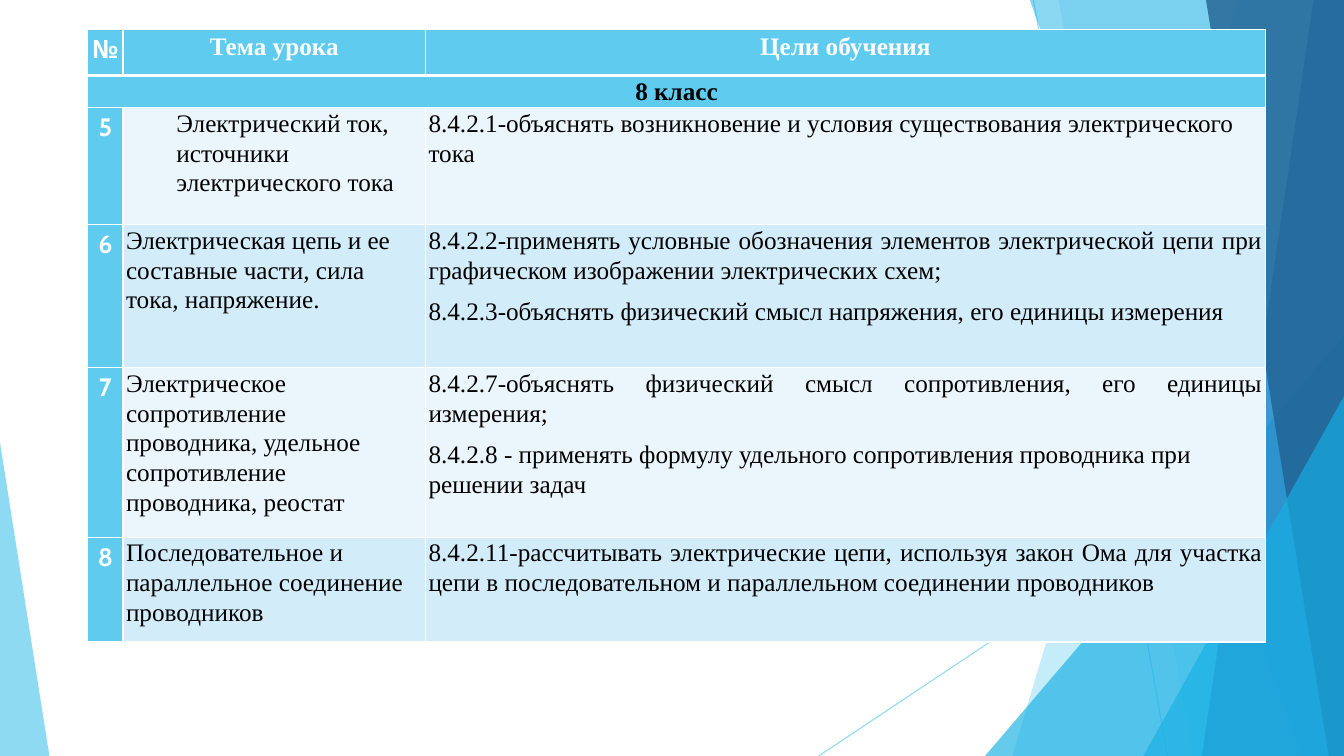
from lxml.etree import SubElement
from pptx import Presentation
from pptx.dml.color import RGBColor
from pptx.enum.shapes import MSO_CONNECTOR, MSO_SHAPE
from pptx.enum.text import PP_ALIGN as Align
from pptx.oxml import parse_xml
from pptx.oxml.ns import nsdecls, qn
from pptx.util import Inches, Pt

WIDTH, HEIGHT = 13.33, 7.5
SKY = RGBColor(0x5F, 0xCB, 0xEF)
AZURE = RGBColor(0x17, 0xB0, 0xE4)
BLUE = RGBColor(0x2E, 0x83, 0xC3)
NAVY = RGBColor(0x22, 0x62, 0x92)
PALE = RGBColor(0xEA, 0xF6, 0xFC)
LIGHT = RGBColor(0xD2, 0xEC, 0xF9)
WHITE = RGBColor(0xFF, 0xFF, 0xFF)
BLACK = RGBColor(0, 0, 0)
SERIF, SANS = "Times New Roman", "Cabin"

COLUMNS = [0.35, 3, 8.33]
ROWS = [0.46, 0.32, 1.16, 1.42, 1.68, 1.04]
HEADINGS = ["№", "Тема урока", "Цели обучения"]
GRADE = "8 класс"
LESSONS = [
    ("5", "Электрический ток, источники электрического тока",
     [("8.4.2.1-объяснять возникновение и условия существования электрического тока", Align.LEFT)]),
    ("6", "Электрическая цепь и ее составные части, сила тока, напряжение.",
     [("8.4.2.2-применять условные обозначения элементов электрической цепи при "
       "графическом изображении электрических схем;", Align.JUSTIFY),
      ("8.4.2.3-объяснять физический смысл напряжения, его единицы измерения", Align.LEFT)]),
    ("7", "Электрическое сопротивление проводника, удельное сопротивление проводника, реостат",
     [("8.4.2.7-объяснять физический смысл сопротивления, его единицы измерения;", Align.JUSTIFY),
      ("8.4.2.8 - применять формулу удельного сопротивления проводника при решении задач",
       Align.LEFT)]),
    ("8", "Последовательное и параллельное соединение проводников",
     [("8.4.2.11-рассчитывать электрические цепи, используя закон Ома для участка цепи в "
       "последовательном и параллельном соединении проводников", Align.JUSTIFY)]),
]


def set_opacity(shape, percent):
    """Make every colour of a shape partly transparent."""
    for colour in shape._element.spPr.iter(qn("a:srgbClr")):
        SubElement(colour, qn("a:alpha"), val=str(percent * 1000))


def paint(shape, colour, opacity):
    """Give a shape a translucent fill without outline or shadow."""
    shape.shadow.inherit = False
    shape.fill.solid()
    shape.fill.fore_color.rgb = colour
    shape.line.fill.background()
    set_opacity(shape, opacity)


def add_ray(slide, start_x, start_y, end_x):
    """Draw a thin line down to the bottom edge."""
    ray = slide.shapes.add_connector(MSO_CONNECTOR.STRAIGHT, Inches(start_x), Inches(start_y),
                                     Inches(end_x), Inches(HEIGHT))
    ray.line.color.rgb = SKY
    ray.line.width = Pt(0.75)
    set_opacity(ray, 70)
    SubElement(ray._element.spPr, qn("a:effectLst"))


def add_band(slide, top_x, bottom_x, colour, opacity):
    """Fill the area between a slanted edge and the right side of the slide."""
    corners = [(WIDTH, -0.01), (WIDTH, HEIGHT), (bottom_x, HEIGHT)]
    builder = slide.shapes.build_freeform(Inches(top_x), Inches(-0.01))
    builder.add_line_segments([(Inches(x), Inches(y)) for x, y in corners], close=True)
    paint(builder.convert_to_shape(), colour, opacity)


def add_wedge(slide, left, top, width, apex, colour, opacity):
    """Add a right triangle that stands on the bottom edge."""
    wedge = slide.shapes.add_shape(MSO_SHAPE.ISOSCELES_TRIANGLE, Inches(left), Inches(top),
                                   Inches(width), Inches(HEIGHT - top))
    wedge.adjustments[0] = apex
    paint(wedge, colour, opacity)


def add_background(slide):
    """Draw the translucent facets on both sides."""
    add_ray(slide, 10.25, 0, 11.58)
    add_ray(slide, WIDTH, 4.03, 8.12)
    add_band(slide, 12.28, 10.04, SKY, 36)
    add_band(slide, 10.5, 11.83, SKY, 20)
    add_wedge(slide, 9.77, 3.33, 3.56, 1, AZURE, 66)
    add_band(slide, 10.21, 12.91, AZURE, 50)
    add_band(slide, 13.03, 11.92, BLUE, 70)
    add_band(slide, 11.96, 13.18, NAVY, 80)
    add_wedge(slide, 11.34, 3.93, 1.99, 1, AZURE, 66)
    add_wedge(slide, 0, 4.39, 0.49, 0, SKY, 70)


def style_cell(cell, colour, top=1, bottom=1):
    """Set the fill, margins and white borders of a cell."""
    cell.fill.solid()
    cell.fill.fore_color.rgb = colour
    cell.margin_left = cell.margin_right = Inches(0.03)
    cell.margin_top = cell.margin_bottom = 0
    borders = [("lnL", 1), ("lnR", 1), ("lnT", top), ("lnB", bottom)]
    for position, (side, width) in enumerate(borders):
        border = parse_xml(f'<a:{side} {nsdecls("a")} w="{Pt(width)}"><a:solidFill>'
                           f'<a:srgbClr val="{WHITE}"/></a:solidFill></a:{side}>')
        cell._tc.get_or_add_tcPr().insert(position, border)


def write_cell(cell, lines, font=SERIF, colour=BLACK, bold=False, spacing=1.07):
    """Write (text, alignment) lines as paragraphs of a cell."""
    cell.text_frame.text = "\n".join(text for text, _ in lines)
    for para, (_, alignment) in zip(cell.text_frame.paragraphs, lines):
        para.alignment = alignment
        para.line_spacing = spacing
        para.space_after = Pt(8)
        for span in para.runs:
            span.font.name = font
            span.font.size = Pt(18)
            span.font.bold = bold
            span.font.color.rgb = colour


def add_lesson_table(slide):
    """Add the table of lesson topics and learning goals."""
    frame = slide.shapes.add_table(len(ROWS), len(COLUMNS), Inches(0.87), Inches(0.29),
                                   Inches(sum(COLUMNS)), Inches(sum(ROWS)))
    table = frame.table
    for column, width in zip(table.columns, COLUMNS):
        column.width = Inches(width)
    for row, height in zip(table.rows, ROWS):
        row.height = Inches(height)

    for index, heading in enumerate(HEADINGS):
        style_cell(table.cell(0, index), SKY, bottom=3)
        style_cell(table.cell(1, index), SKY, top=3)
        write_cell(table.cell(0, index), [(heading, Align.CENTER)],
                   SERIF if index else SANS, WHITE, True, 1.15)
    table.cell(1, 0).merge(table.cell(1, 2))
    write_cell(table.cell(1, 0), [(GRADE, Align.CENTER)], bold=True)

    for index, (number, topic, goals) in enumerate(LESSONS):
        number_cell, topic_cell, goals_cell = table.rows[index + 2].cells
        band = LIGHT if index % 2 else PALE
        for cell, colour in ((number_cell, SKY), (topic_cell, band), (goals_cell, band)):
            style_cell(cell, colour)
        write_cell(number_cell, [(number, Align.CENTER)], SANS, WHITE, True, 1.15)
        write_cell(topic_cell, [(topic, Align.LEFT)])
        write_cell(goals_cell, goals)
    first_topic = table.cell(2, 1).text_frame.paragraphs[0]
    first_topic._p.get_or_add_pPr().set("marL", str(Inches(0.5)))


def main():
    """Build and save the slide."""
    deck = Presentation()
    deck.slide_width, deck.slide_height = Inches(WIDTH), Inches(HEIGHT)
    slide = deck.slides.add_slide(deck.slide_layouts[6])
    add_background(slide)
    add_lesson_table(slide)
    deck.save("out.pptx")


if __name__ == "__main__":
    main()
